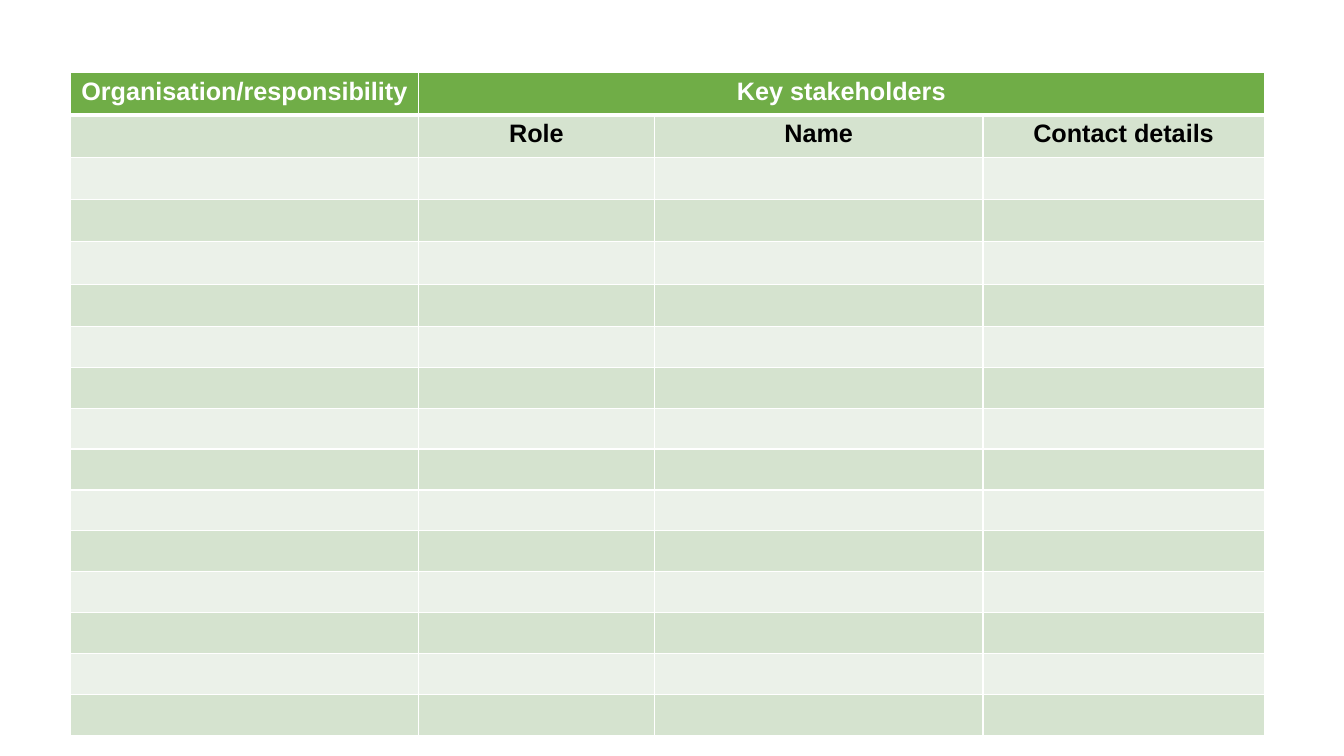
from dataclasses import dataclass

from lxml.etree import SubElement
from pptx import Presentation
from pptx.dml.color import RGBColor
from pptx.enum.text import PP_ALIGN
from pptx.oxml.ns import qn
from pptx.util import Inches, Pt


@dataclass(frozen=True)
class Theme:
    font: str = "Arial"
    text_size: int = 18
    header_fill: str = "70AD47"
    header_text: str = "FFFFFF"
    body_text: str = "000000"
    dark_band: str = "D5E3CF"
    light_band: str = "EBF1E9"
    border: str = "FFFFFF"
    thin_line: int = 1
    thick_line: int = 3


THEME = Theme()
COLUMN_WIDTHS = [3.45, 2.34, 3.26, 2.79]
ROW_HEIGHTS = [0.42] * 6 + [0.4] * 10
HEADINGS = [
    ["Organisation/responsibility", "Key stakeholders", "", ""],
    ["", "Role", "Name", "Contact details"],
]


def set_borders(cell, top, bottom):
    """Draw the four cell edges; widths are in points."""
    properties = cell._tc.get_or_add_tcPr()
    widths = {"L": THEME.thin_line, "R": THEME.thin_line, "T": top, "B": bottom}
    for side, width in widths.items():
        line = SubElement(properties, qn(f"a:ln{side}"), w=str(Pt(width)))
        fill = SubElement(line, qn("a:solidFill"))
        SubElement(fill, qn("a:srgbClr"), val=THEME.border)


def style_cell(cell, row):
    """Apply header or banded styling according to the row number."""
    set_borders(
        cell,
        top=THEME.thick_line if row == 1 else THEME.thin_line,
        bottom=THEME.thick_line if row == 0 else THEME.thin_line,
    )
    band = THEME.dark_band if row % 2 else THEME.light_band
    cell.fill.solid()
    cell.fill.fore_color.rgb = RGBColor.from_string(
        THEME.header_fill if row == 0 else band
    )


def write_heading(cell, text, color):
    para = cell.text_frame.paragraphs[0]
    para.text = text
    para.alignment = PP_ALIGN.CENTER
    para.font.name = THEME.font
    para.font.size = Pt(THEME.text_size)
    para.font.bold = True
    para.font.color.rgb = RGBColor.from_string(color)


def add_stakeholder_table(page):
    frame = page.shapes.add_table(
        len(ROW_HEIGHTS), len(COLUMN_WIDTHS),
        Inches(0.7), Inches(0.72),
        Inches(sum(COLUMN_WIDTHS)), Inches(sum(ROW_HEIGHTS)),
    )
    table = frame.table

    # Grid
    for column, width in zip(table.columns, COLUMN_WIDTHS):
        column.width = Inches(width)
    for number, (row, height) in enumerate(zip(table.rows, ROW_HEIGHTS)):
        row.height = Inches(height)
        for cell in row.cells:
            style_cell(cell, number)

    # Headings
    table.cell(0, 1).merge(table.cell(0, 3))
    for row, texts in enumerate(HEADINGS):
        color = THEME.body_text if row else THEME.header_text
        for column, text in enumerate(texts):
            if text:
                write_heading(table.cell(row, column), text, color)


def main():
    deck = Presentation()
    deck.slide_width = Inches(13.33)
    deck.slide_height = Inches(7.5)
    blank_layout = deck.slide_layouts[6]
    page = deck.slides.add_slide(blank_layout)
    add_stakeholder_table(page)
    deck.save("out.pptx")


if __name__ == "__main__":
    main()
